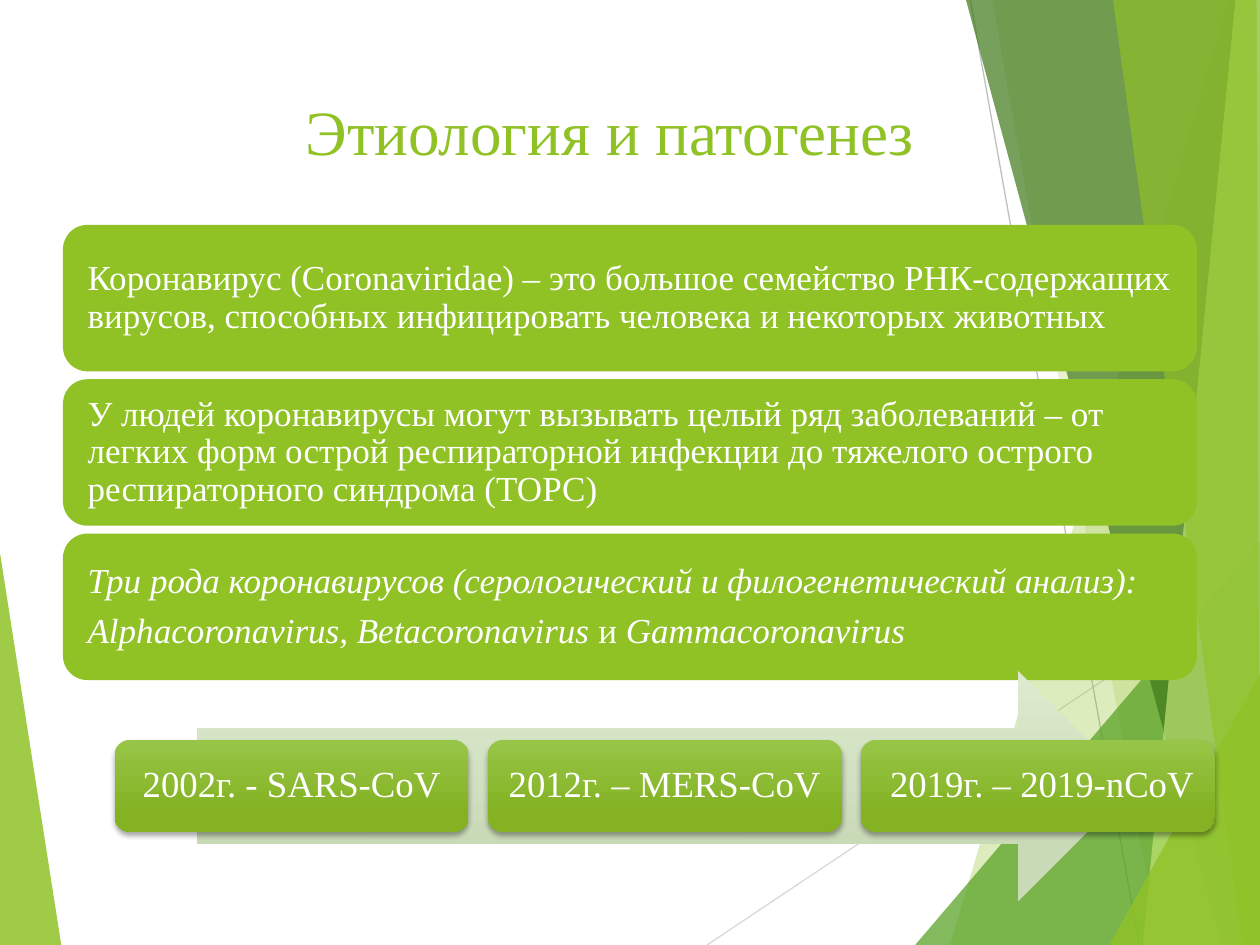
from lxml.etree import SubElement
from pptx import Presentation
from pptx.dml.color import RGBColor
from pptx.enum.shapes import MSO_CONNECTOR as Connector, MSO_SHAPE as Shape
from pptx.enum.text import MSO_ANCHOR as Anchor, PP_ALIGN as Align
from pptx.oxml.ns import qn
from pptx.util import Pt

LIME = RGBColor(0x90, 0xC2, 0x26)
GREEN = RGBColor(0x54, 0xA0, 0x21)
FOREST = RGBColor(0x3F, 0x78, 0x19)
PALE_LIME = RGBColor(0xC0, 0xE4, 0x74)
GREY = RGBColor(0xBF, 0xBF, 0xBF)
LIGHT_GREY = RGBColor(0xD9, 0xD9, 0xD9)
WHITE = RGBColor(0xFF, 0xFF, 0xFF)
ARROW_GRADIENT = RGBColor(0xDD, 0xEA, 0xCF), RGBColor(0xC9, 0xDA, 0xB7)
YEAR_GRADIENT = RGBColor(0x97, 0xC5, 0x47), RGBColor(0x84, 0xB2, 0x23)

SERIF = "Times New Roman"
WIDTH, HEIGHT = 720, 540

# Corner points, colour, opacity in percent; from back to front
FACETS = [
    ([(0, 316), (35, HEIGHT), (0, HEIGHT)], LIME, 85),
    ([(702, 0), (543, HEIGHT), (WIDTH, HEIGHT), (WIDTH, 0)], LIME, 30),
    ([(567, 0), (662, HEIGHT), (WIDTH, HEIGHT), (WIDTH, 0)], LIME, 20),
    ([(523, HEIGHT), (WIDTH, 309), (WIDTH, HEIGHT)], GREEN, 72),
    ([(552, 0), (698, HEIGHT), (WIDTH, HEIGHT), (WIDTH, 0)], FOREST, 70),
    ([(706, 0), (653, HEIGHT), (WIDTH, HEIGHT), (WIDTH, 0)], PALE_LIME, 70),
    ([(636, 0), (710, HEIGHT), (WIDTH, HEIGHT), (718.5, 0)], LIME, 65),
    ([(634.5, HEIGHT), (WIDTH, 385), (WIDTH, HEIGHT)], LIME, 80),
]
RAYS = [((404, HEIGHT), (WIDTH, 329), LIGHT_GREY),
        ((554.5, 0), (651, HEIGHT), GREY)]

# Each fact is a list of paragraphs, each paragraph a list of (text, format)
ITALIC = {"italic": True}
FACTS = [
    [[("Коронавирус (Coronaviridae) – это большое семейство РНК-содержащих "
       "вирусов, способных инфицировать человека и некоторых животных", {})]],
    [[("У людей коронавирусы могут вызывать целый ряд заболеваний – от легких "
       "форм острой респираторной инфекции до тяжелого острого "
       "респираторного синдрома (ТОРС)", {})]],
    [[("Три рода коронавирусов (серологический и филогенетический анализ):", ITALIC)],
     [("Alphacoronavirus, Betacoronavirus ", ITALIC), ("и ", {}),
      ("Gammacoronavirus", ITALIC)]],
]
OUTBREAKS = [
    [("2002г. - SARS-CoV", {})],
    [("2012г. – MERS-CoV", {})],
    [(" ", {"name": "Cabin"}), ("2019г. – 2019-nCoV", {})],
]


def apply(target, values):
    for name, value in values.items():
        setattr(target, name, value)


def set_opacity(color_element, percent):
    SubElement(color_element, qn("a:alpha")).set("val", str(percent * 1000))


def add_facet(page, points, color, opacity):
    builder = page.shapes.build_freeform(*points[0], scale=Pt(1))
    builder.add_line_segments(points[1:], close=True)
    facet = builder.convert_to_shape()
    facet.shadow.inherit = False
    facet.line.fill.background()
    facet.fill.solid()
    facet.fill.fore_color.rgb = color
    set_opacity(facet.fill._xPr.find(".//" + qn("a:srgbClr")), opacity)


def add_ray(page, start, end, color):
    ray = page.shapes.add_connector(
        Connector.STRAIGHT, *[Pt(value) for value in start + end])
    ray.line.color.rgb = color
    ray.line.width = Pt(0.75)
    SubElement(ray._element.spPr, qn("a:effectLst"))


def add_shape(page, kind, bounds, colors):
    """Add a shape with a solid fill (one colour) or a downward gradient (two)."""
    shape = page.shapes.add_shape(kind, *[Pt(value) for value in bounds])
    shape.shadow.inherit = False
    shape.line.fill.background()
    if len(colors) == 1:
        shape.fill.solid()
        shape.fill.fore_color.rgb = colors[0]
    else:
        shape.fill.gradient()
        shape.fill.gradient_angle = 270
        for stop, color, position in zip(shape.fill.gradient_stops, colors, (0, 0.78)):
            stop.color.rgb = color
            stop.position = position
    return shape


def add_drop_shadow(shape):
    effects = shape._element.spPr.find(qn("a:effectLst"))
    shadow = SubElement(effects, qn("a:outerShdw"))
    values = {"blurRad": Pt(3), "dist": Pt(2), "dir": 90 * 60000, "rotWithShape": 0}
    for name, value in values.items():
        shadow.set(name, str(int(value)))
    color = SubElement(shadow, qn("a:srgbClr"))
    color.set("val", "000000")
    set_opacity(color, 35)


def write(shape, paragraphs, size, align, inset):
    frame = shape.text_frame
    apply(frame, {"word_wrap": True, "vertical_anchor": Anchor.MIDDLE})
    apply(frame, {f"margin_{side}": Pt(inset)
                  for side in ("left", "top", "right", "bottom")})
    for index, spans in enumerate(paragraphs):
        para = frame.add_paragraph() if index else frame.paragraphs[0]
        apply(para, {"alignment": align, "line_spacing": 0.9,
                     "space_after": Pt(size * 0.35)})
        for text, extra in spans:
            span = para.add_run()
            span.text = text
            apply(span.font, {"name": SERIF, "size": Pt(size), **extra})
            span.font.color.rgb = WHITE


def add_title(page, text):
    title = page.shapes.title
    apply(title, {"left": Pt(48), "top": Pt(49), "width": Pt(601), "height": Pt(103)})
    title.text_frame.text = text
    title.text_frame.vertical_anchor = Anchor.TOP
    para = title.text_frame.paragraphs[0]
    para.alignment = Align.CENTER
    font = para.runs[0].font
    apply(font, {"name": SERIF, "size": Pt(36)})
    font.color.rgb = LIME


def add_facts(page):
    for row, paragraphs in enumerate(FACTS):
        box = add_shape(page, Shape.ROUNDED_RECTANGLE,
                        (36, 128.5 + row * 88.2, 648, 83.7), [LIME])
        write(box, paragraphs, 20, Align.LEFT, 10)


def add_timeline(page):
    add_shape(page, Shape.RIGHT_ARROW, (112.5, 383.4, 535, 131.5), ARROW_GRADIENT)
    for column, spans in enumerate(OUTBREAKS):
        box = add_shape(page, Shape.ROUNDED_RECTANGLE,
                        (65.5 + column * 213.2, 422.8, 202.3, 52.6), YEAR_GRADIENT)
        add_drop_shadow(box)
        write(box, [spans], 21, Align.CENTER, 9)


def main():
    deck = Presentation()
    apply(deck, {"slide_width": Pt(WIDTH), "slide_height": Pt(HEIGHT)})
    page = deck.slides.add_slide(deck.slide_layouts[5])
    add_facet(page, *FACETS[0])
    for ray in RAYS:
        add_ray(page, *ray)
    for facet in FACETS[1:]:
        add_facet(page, *facet)
    add_title(page, "Этиология и патогенез")
    add_facts(page)
    add_timeline(page)
    deck.save("out.pptx")


if __name__ == "__main__":
    main()
